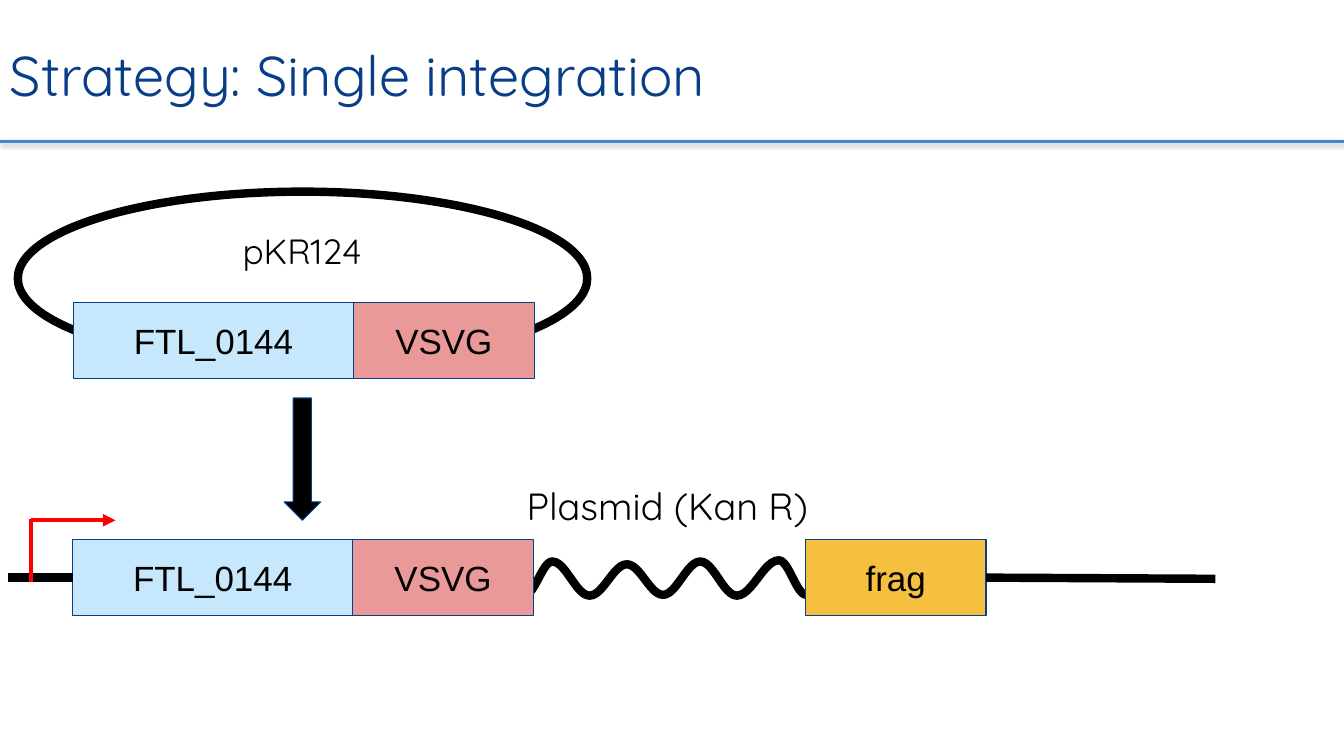
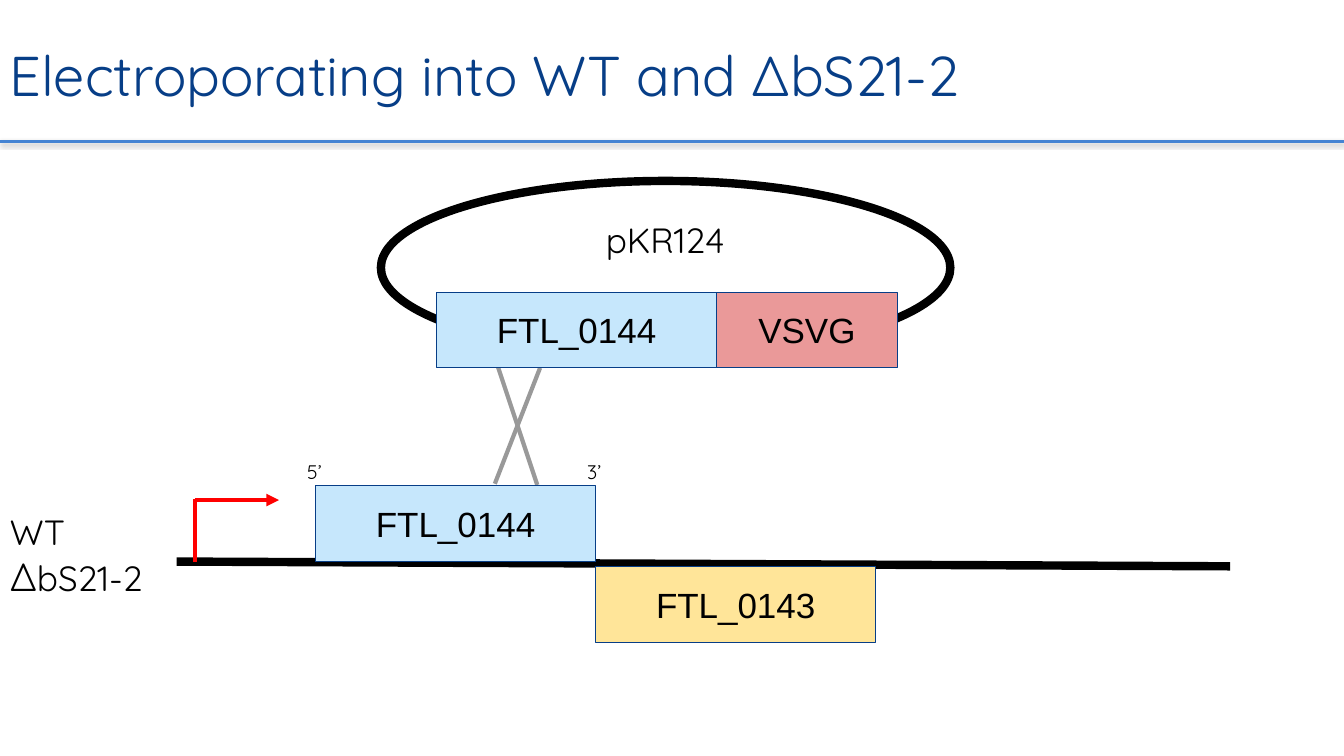
"""Build two slides on the single integration strategy."""
from math import cos, pi

from lxml import etree
from pptx import Presentation
from pptx.dml.color import RGBColor
from pptx.enum.shapes import MSO_CONNECTOR, MSO_SHAPE
from pptx.enum.text import MSO_ANCHOR, MSO_AUTO_SIZE, PP_ALIGN
from pptx.oxml import parse_xml
from pptx.oxml.ns import nsdecls, qn
from pptx.util import Cm, Pt

LINE = MSO_CONNECTOR.STRAIGHT
RECT, OVAL, DOWN = MSO_SHAPE.RECTANGLE, MSO_SHAPE.OVAL, MSO_SHAPE.DOWN_ARROW
MIDDLE, TOP = MSO_ANCHOR.MIDDLE, MSO_ANCHOR.TOP
NO_FIT = MSO_AUTO_SIZE.NONE
LEFT, CENTER = PP_ALIGN.LEFT, PP_ALIGN.CENTER
LEFT_SIDE, RIGHT_SIDE = 1, 3
WIDTH, HEIGHT = 33.87, 19.05
GENE, TAG, TALL = 7.06, 4.55, 1.91
SANS, ROUND = "Arial", "Quicksand"
HUES = {
    "navy": "073E87", "rule": "4584D3", "black": "000000", "white": "FFFFFF",
    "sky": "C6E7FC", "rose": "EA9999", "gold": "F5C040", "cream": "FFE599",
    "red": "FF0000", "gray": "999999",
}
SHADOW = (
    f'<a:effectLst {nsdecls("a")}><a:outerShdw blurRad="39370" dist="20320" '
    'dir="5400000" rotWithShape="0"><a:srgbClr val="000000">'
    '<a:alpha val="38000"/></a:srgbClr></a:outerShdw></a:effectLst>'
)


def hue(name):
    """Return the named colour."""
    return RGBColor.from_string(HUES[name])


def style(run, size, font=ROUND, color="black"):
    """Set the font of a run."""
    run.font.size, run.font.name = Pt(size), font
    run.font.color.rgb = hue(color)


def write(frame, text, size, font=ROUND, color="black", align=CENTER,
          anchor=TOP, pads=(0.25, 0.25)):
    """Fill a text frame and format all of its runs."""
    frame.text = text
    frame.word_wrap, frame.auto_size = True, NO_FIT
    frame.vertical_anchor = anchor
    frame.margin_left = frame.margin_right = Cm(pads[0])
    frame.margin_top = frame.margin_bottom = Cm(pads[1])
    for para in frame.paragraphs:
        para.alignment = align
        for run in para.runs:
            style(run, size, font, color)


def shape(slide, kind, x, y, w, h, fill, edge="navy", weight=0.75):
    """Add a flat preset shape."""
    item = slide.shapes.add_shape(kind, Cm(x), Cm(y), Cm(w), Cm(h))
    item.shadow.inherit = False
    item.fill.solid()
    item.fill.fore_color.rgb = hue(fill)
    item.line.color.rgb, item.line.width = hue(edge), Pt(weight)
    return item


def block(slide, text, x, y, fill, w=GENE):
    """Add a labelled gene block."""
    item = shape(slide, RECT, x, y, w, TALL, fill)
    write(item.text_frame, text, 25, SANS, anchor=MIDDLE)
    return item


def label(slide, text, x, y, w, h, size, align=CENTER):
    """Add a text box."""
    box = slide.shapes.add_textbox(Cm(x), Cm(y), Cm(w), Cm(h))
    write(box.text_frame, text, size, align=align)
    return box


def line(slide, start, end, color="black", weight=6, head=False):
    """Add a straight line, with an arrowhead if asked."""
    item = slide.shapes.add_connector(LINE, *map(Cm, start + end))
    item.line.color.rgb, item.line.width = hue(color), Pt(weight)
    if head:
        edge = item.line._get_or_add_ln()
        etree.SubElement(edge, qn("a:tailEnd"), type="triangle")
    etree.SubElement(item.element.spPr, qn("a:effectLst"))
    return item


def page(deck, title):
    """Add a slide with its title and the rule below it."""
    slide = deck.slides.add_slide(deck.slide_layouts[5])
    rule = line(slide, (WIDTH, 3.56), (0, 3.56), "rule", 2)
    props = rule.element.spPr
    props.replace(props.find(qn("a:effectLst")), parse_xml(SHADOW))
    head = slide.shapes.title
    head.left, head.top = Cm(0), Cm(0.33)
    head.width, head.height = Cm(33.55), Cm(3.07)
    write(head.text_frame, title, 40, color="navy", align=LEFT,
          anchor=MIDDLE, pads=(0.25, 0.13))
    return slide


def fusion(slide, x, y):
    """Add the gene and its tag side by side, and return the gene."""
    gene = block(slide, "FTL_0144", x, y, "sky")
    block(slide, "VSVG", x + GENE, y, "rose", TAG)
    return gene


def plasmid(slide, x, y):
    """Add the ring with its fused genes and name."""
    shape(slide, OVAL, x - 1.4, y - 2.8, 14.35, 4.37, "white", "black", 6)
    fusion(slide, x, y)
    label(slide, "pKR124", x + 2.44, y - 2.1, 6.65, 1.57, 25)


def start(slide, x, y):
    """Add the bent red arrow of a promoter."""
    line(slide, (x, y), (x + 2.12, y), "red", 3, True)
    line(slide, (x, y - 0.03), (x, y + 1.55), "red", 3)


def wave(slide, turns, steps=12):
    """Add a smooth wave through its turning points."""
    dots = []
    for (x, y), (right, low) in zip(turns, turns[1:]):
        for step in range(1, steps + 1):
            part = step / steps
            rise = (1 - cos(pi * part)) / 2
            dots.append((Cm(x + (right - x) * part), Cm(y + (low - y) * rise)))
    pen = slide.shapes.build_freeform(*map(Cm, turns[0]))
    pen.add_line_segments(dots, close=False)
    curve = pen.convert_to_shape()
    curve.shadow.inherit = False
    curve.fill.background()
    curve.line.color.rgb, curve.line.width = hue("black"), Pt(6)


def single(deck):
    """Build the slide of the integrated plasmid."""
    slide = page(deck, "Strategy: Single integration")
    plasmid(slide, 1.85, 7.63)
    shape(slide, DOWN, 7.16, 10.03, 0.92, 3.08, "black")
    wave(slide, [(13.23, 14.99), (13.92, 14.15), (14.86, 15.01),
                 (15.8, 14.22), (16.71, 14.99), (17.65, 14.15),
                 (18.57, 15.01), (19.63, 14.12), (20.32, 14.99)])
    top = 13.6
    gene = fusion(slide, 1.83, top)
    frag = block(slide, "frag", 20.3, top, "gold", TAG)
    mid = top + TALL / 2
    line(slide, (0.2, mid), (1.83, mid)).end_connect(gene, LEFT_SIDE)
    line(slide, (24.85, mid), (30.63, mid + 0.03)).begin_connect(
        frag, RIGHT_SIDE)
    label(slide, "Plasmid (Kan R)", 12.6, 11.91, 8.43, 1.68, 27)
    start(slide, 0.79, 13.11)


def target(deck):
    """Build the slide of the crossover with the genome."""
    slide = page(deck, "Electroporating into WT and ∆bS21-2")
    line(slide, (12.55, 9.25), (13.54, 12.22), "gray", 3)
    line(slide, (12.47, 12.19), (13.61, 9.27), "gray", 3)
    line(slide, (4.45, 14.15), (31, 14.27))
    start(slide, 4.91, 12.6)
    left = 7.95
    block(slide, "FTL_0144", left, 12.24, "sky")
    for text, x in (("5’", left), ("3’", left + GENE)):
        label(slide, text, x - 0.46, 11.35, 1.45, 1.12, 14, LEFT)
    block(slide, "FTL_0143", left + GENE, 14.28, "cream")
    names = label(slide, "WT\n∆", 0, 12.62, 6.65, 2.77, 25, LEFT)
    strain = names.text_frame.paragraphs[1]
    strain.add_run().text = "bS21-2"
    for run, size in zip(strain.runs, (28, 25)):
        style(run, size)
    plasmid(slide, 11, 7.36)


def main():
    """Build and save the deck."""
    deck = Presentation()
    deck.slide_width, deck.slide_height = Cm(WIDTH), Cm(HEIGHT)
    single(deck)
    target(deck)
    deck.save("out.pptx")


if __name__ == "__main__":
    main()
